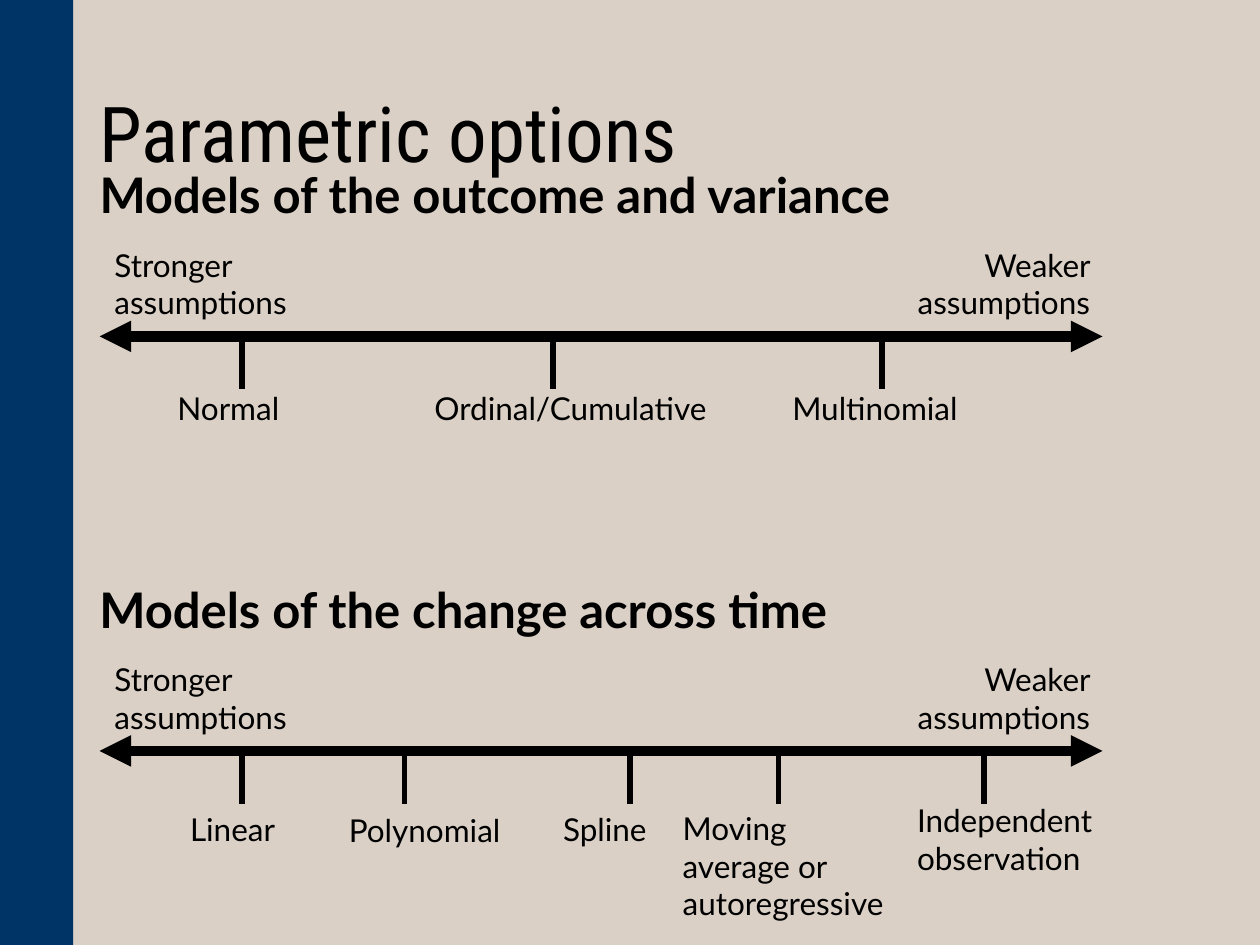
from pptx import Presentation
from pptx.dml.color import RGBColor
from pptx.enum.shapes import MSO_CONNECTOR, MSO_SHAPE
from pptx.enum.text import MSO_ANCHOR, MSO_AUTO_SIZE, PP_ALIGN
from pptx.oxml.ns import qn
from pptx.util import Inches, Pt
from lxml.etree import SubElement

COLS, ROWS = 100, 75
LEFT, RIGHT = 7.9, 87.5
WIDE = 86.2
HEAD = dict(size=Pt(28), bold=True, name="Lato")
BODY = dict(size=Pt(18), name="Lato")
TITLE = dict(size=Pt(44), name="Roboto Condensed")
SPACED = dict(line_spacing=0.9, space_before=Pt(10))

# Each scale: axis row, heading, tick columns, labels (column, rows below axis, width, height, text)
SCALES = [
    (26.7, "Models of the outcome and variance", [19.2, 43.9, 70], [
        (13.1, 3.7, 13.6, 4, "Normal"),
        (33.5, 3.7, 28.4, 4, "Ordinal/Cumulative"),
        (61.9, 3.7, 28.4, 4, "Multinomial")]),
    (59.6, "Models of the change across time", [19.2, 32.1, 50, 61.8, 78.1], [
        (14.1, 4.2, 16.1, 4, "Linear"),
        (26.7, 4.3, 16.1, 4, "Polynomial"),
        (43.7, 4.2, 16.1, 4, "Spline"),
        (53.2, 4.1, 18.7, 10.1, "Moving average or\vautoregressive"),
        (71.8, 3.5, 18.7, 7.1, "Independent observation")]),
]


def color(text):
    return RGBColor.from_string(text)


def assign(item, values):
    for key, value in values.items():
        setattr(item, key, value)


class Deck:
    """Holds the style and the current slide; lengths are grid columns and rows."""
    ink, paper, band = "000000", "DAD0C6", "003366"

    def __init__(self):
        self.prs = Presentation()
        assign(self.prs, dict(slide_width=Inches(10), slide_height=Inches(7.5)))
        self.dx = self.prs.slide_width / COLS
        self.dy = self.prs.slide_height / ROWS
        self.slide = self.prs.slides.add_slide(self.prs.slide_layouts[1])
        fill = self.slide.background.fill
        fill.solid()
        fill.fore_color.rgb = color(self.paper)

    def grid(self, *vals):
        return [round(v * (self.dy if i % 2 else self.dx)) for i, v in enumerate(vals)]

    def bar(self, *area):
        box = self.slide.shapes.add_shape(MSO_SHAPE.RECTANGLE, *self.grid(*area))
        box.shadow.inherit = False
        box.fill.solid()
        box.fill.fore_color.rgb = color(self.band)
        box.line.fill.background()

    def text(self, words, area, font, para=None, holder=None, anchor=MSO_ANCHOR.TOP):
        """Fill a placeholder, or a new text box when none is given."""
        area = self.grid(*area)
        box = holder or self.slide.shapes.add_textbox(*area)
        assign(box, dict(zip(("left", "top", "width", "height"), area)))
        frame = box.text_frame
        assign(frame, dict(text=words, word_wrap=True, vertical_anchor=anchor,
                           auto_size=MSO_AUTO_SIZE.NONE))
        for line in frame.paragraphs:
            assign(line, dict(alignment=PP_ALIGN.LEFT) | (para or {}))
            props = line._p.get_or_add_pPr()
            props.set("marL", "0")
            props.set("indent", "0")
            SubElement(props, qn("a:buNone"))
            for run in line.runs:
                assign(run.font, font)
                run.font.color.rgb = color(self.ink)

    def line(self, ends, width, heads=False):
        link = self.slide.shapes.add_connector(MSO_CONNECTOR.STRAIGHT, *self.grid(*ends))
        link.line.width = Pt(width)
        link.line.color.rgb = color(self.ink)
        if heads:
            for tag in ("a:headEnd", "a:tailEnd"):
                SubElement(link.line._get_or_add_ln(), qn(tag), type="triangle")
        SubElement(link._element.spPr, qn("a:effectLst"))

    def scale(self, row, head, ticks, labels, holder=None):
        """Draw a heading over a two-way axis with ticks and labels."""
        self.text(head, (6.9, row - 13.6, WIDE, 6.1), HEAD, SPACED, holder)
        self.line((LEFT, row, RIGHT, row), 6, heads=True)
        for col in ticks:
            self.line((col, row + 0.2, col, row + 4.2), 3)
        for col, words, side in ((8.1, "Stronger assumptions", PP_ALIGN.LEFT),
                                 (68.9, "Weaker assumptions", PP_ALIGN.RIGHT)):
            self.text(words, (col, row - 7.7, 18.6, 7.1), BODY, dict(alignment=side))
        for col, drop, width, height, words in labels:
            self.text(words, (col, row + drop, width, height), BODY)


def main():
    deck = Deck()
    title, body = deck.slide.placeholders
    deck.bar(0, 0, 5.8, ROWS)
    deck.text("Parametric options", (6.9, 4, WIDE, 13.8), TITLE,
              dict(line_spacing=0.9), title, MSO_ANCHOR.MIDDLE)
    for scale, holder in zip(SCALES, (body, None)):
        deck.scale(*scale, holder)
    deck.prs.save("out.pptx")


if __name__ == "__main__":
    main()
